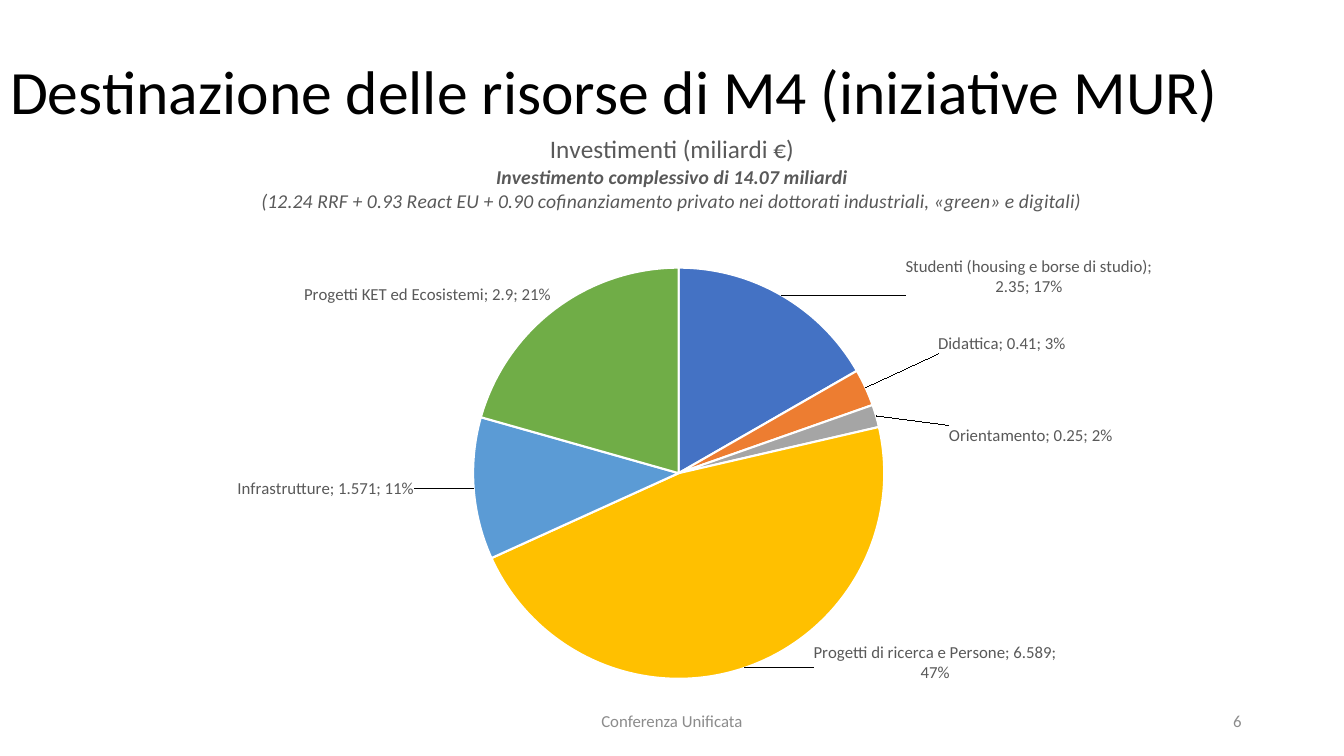
from dataclasses import dataclass
from pptx import Presentation
from pptx import util as u
from pptx.chart import data
from pptx.dml import color
from pptx.enum import chart as ch, text
from pptx.oxml import parse_xml, ns


@dataclass(frozen=True)
class Theme:
    font: str = "Calibri"
    ink: str = "000000"
    soft: str = "595959"
    pale: str = "8C8C8C"
    white: str = "FFFFFF"
    head: int = 44
    lead: int = 18
    sub: int = 14
    small: int = 12


THEME = Theme()
SLICES = [
    ("Studenti (housing e borse di studio)", 2.35, "4472C4", (0.09, 0.01)),
    ("Didattica", 0.41, "ED7D31", (0.05, -0.05)),
    ("Orientamento", 0.25, "A5A5A5", (0.05, 0.05)),
    ("Progetti di ricerca e Persone", 6.589, "FFC000", (0.05, -0.05)),
    ("Infrastrutture", 1.571, "5B9BD5", (-0.04, 0)),
    ("Progetti KET ed Ecosistemi", 2.9, "70AD47", None),
]
HEADING = [
    ("Investimenti (miliardi €)", THEME.lead, False, False),
    ("Investimento complessivo di 14.07 miliardi", THEME.sub, True, True),
    ("(12.24 RRF + 0.93 React EU + 0.90 cofinanziamento privato nei "
     "dottorati industriali, «green» e digitali)", THEME.sub, False, True),
]


def style(font, size, tint, bold=False, italic=False):
    font.name, font.size = THEME.font, u.Pt(size)
    font.bold, font.italic = bold, italic
    font.color.rgb = color.RGBColor.from_string(tint)


def place(shape, left, top, width, height):
    shape.left, shape.top = u.Cm(left), u.Cm(top)
    shape.width, shape.height = u.Cm(width), u.Cm(height)


def add_title(slide, words):
    title = slide.shapes.title
    place(title, 0, 0.53, 33.87, 3.68)
    frame = title.text_frame
    frame.text = words
    frame.vertical_anchor = text.MSO_ANCHOR.MIDDLE
    para = frame.paragraphs[0]
    para.alignment = text.PP_ALIGN.LEFT
    para.line_spacing = 0.9
    style(para.font, THEME.head, THEME.ink)


def add_note(slide, words, left, width, align):
    box = slide.shapes.add_textbox(u.Cm(left), u.Cm(17.65), u.Cm(width), u.Cm(1.02))
    frame = box.text_frame
    frame.word_wrap = True
    frame.vertical_anchor = text.MSO_ANCHOR.MIDDLE
    para = frame.paragraphs[0]
    para.text, para.alignment = words, align
    style(para.font, THEME.small, THEME.pale)


def layout(inner=False, **sizes):
    parts = '<c:layoutTarget val="inner"/>' if inner else ""
    if inner:
        parts += '<c:xMode val="edge"/><c:yMode val="edge"/>'
    parts += "".join(f'<c:{key} val="{val}"/>' for key, val in sizes.items())
    return parse_xml(f'<c:layout {ns.nsdecls("c")}><c:manualLayout>{parts}'
                     "</c:manualLayout></c:layout>")


def add_heading(chart):
    frame = chart.chart_title.text_frame
    for n, (words, size, bold, italic) in enumerate(HEADING):
        para = frame.add_paragraph() if n else frame.paragraphs[0]
        para.text = words
        style(para.font, size, THEME.soft, bold, italic)
    chart.chart_title.include_in_layout = False


def set_label(node, shift=None):
    for name in ("showVal", "showCatName", "showPercent"):
        node.find(ns.qn(f"c:{name}")).set("val", "1")
    mark = parse_xml(f'<c:separator {ns.nsdecls("c")}>; </c:separator>')
    last = node.find(ns.qn("c:showBubbleSize"))
    if last is None:
        last = node.find(ns.qn("c:showPercent"))
    last.addnext(mark)
    if shift:
        node.find(ns.qn("c:idx")).addnext(layout(x=shift[0], y=shift[1]))


def add_pie(slide):
    source = data.CategoryChartData()
    source.categories = [item[0] for item in SLICES]
    source.add_series("Series 1", [item[1] for item in SLICES])
    chart = slide.shapes.add_chart(
        ch.XL_CHART_TYPE.PIE, u.Cm(0), u.Cm(2.82), u.Cm(33.87), u.Cm(15.7), source).chart
    style(chart.font, THEME.small, THEME.soft)
    chart.has_legend = False
    add_heading(chart)
    plot = chart.plots[0]
    plot.vary_by_categories = True
    series = plot.series[0]
    labels = series.data_labels
    labels.show_value = labels.show_category_name = labels.show_percentage = True
    labels.position = ch.XL_LABEL_POSITION.OUTSIDE_END
    style(labels.font, THEME.small, THEME.soft)
    for n, (_, _, tint, shift) in enumerate(SLICES):
        point = series.points[n]
        point.format.fill.solid()
        point.format.fill.fore_color.rgb = color.RGBColor.from_string(tint)
        point.format.line.color.rgb = color.RGBColor.from_string(THEME.white)
        point.format.line.width = u.Pt(1.5)
        if shift:
            point.data_label.position = ch.XL_LABEL_POSITION.OUTSIDE_END
            style(point.data_label.font, THEME.small, THEME.soft)
    group = series._element.find(ns.qn("c:dLbls"))
    set_label(group)
    for node in group.findall(ns.qn("c:dLbl")):
        set_label(node, SLICES[int(node.find(ns.qn("c:idx")).get("val"))][3])
    area = chart._chartSpace.chart.plotArea
    for old in area.findall(ns.qn("c:layout")):
        area.remove(old)
    area.insert(0, layout(True, x=0.35, y=0.25, w=0.31, h=0.66))


def main():
    deck = Presentation()
    deck.slide_width, deck.slide_height = u.Cm(33.87), u.Cm(19.05)
    slide = deck.slides.add_slide(deck.slide_layouts[5])
    add_title(slide, "Destinazione delle risorse di M4 (iniziative MUR)")
    add_note(slide, "Conferenza Unificata", 11.22, 11.43, text.PP_ALIGN.CENTER)
    add_note(slide, "6", 23.92, 7.62, text.PP_ALIGN.RIGHT)
    add_pie(slide)
    deck.save("out.pptx")


if __name__ == "__main__":
    main()
